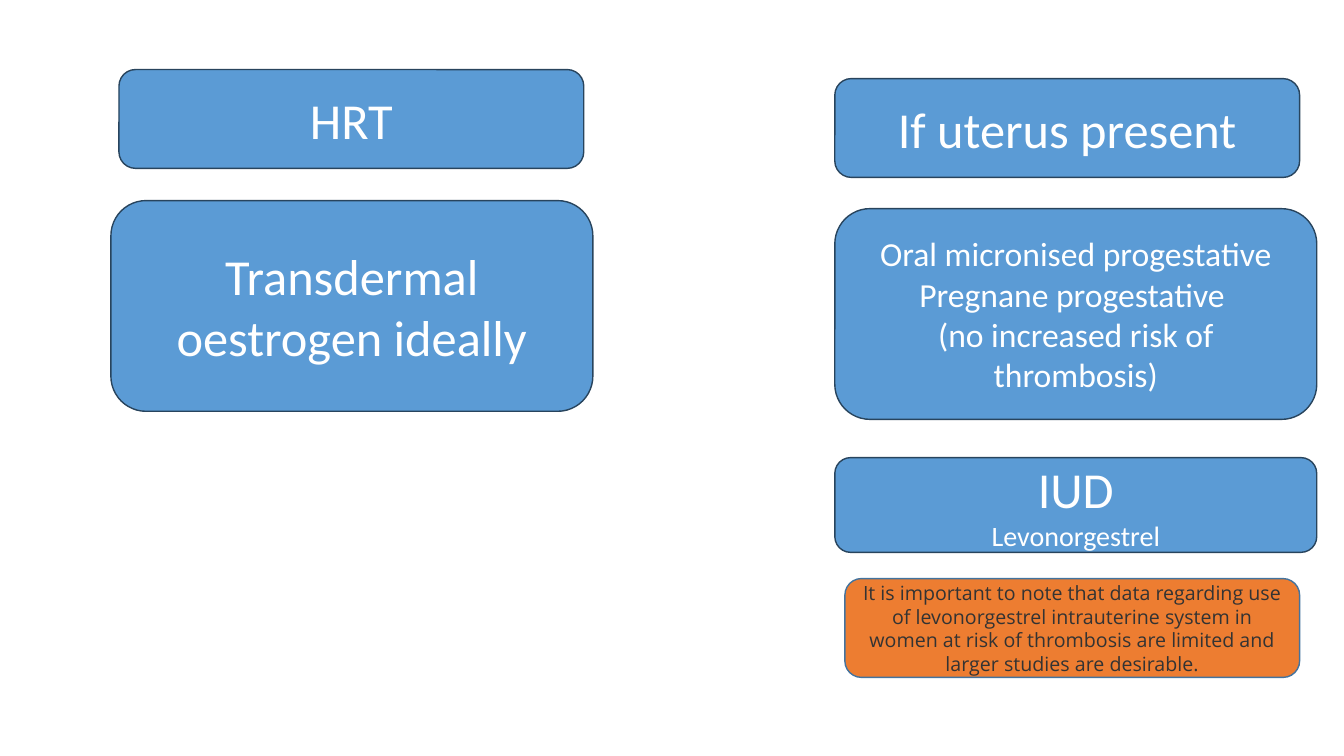
import pptx
import pptx.dml.color
import pptx.enum.shapes
import pptx.enum.text
import pptx.util
from pptx.util import Inches

BLUE, BLUE_EDGE = "5B9BD5", "28445D"
ORANGE, ORANGE_EDGE = "ED7D31", "43739E"
WHITE, DARK = "FFFFFF", "333333"


def rgb(hex_colour):
    return pptx.dml.color.RGBColor.from_string(hex_colour)


def add_card(s, left, top, width, height, lines, fill=BLUE, edge=BLUE_EDGE,
             colour=WHITE, font="Calibri"):
    """Add a rounded box; lines holds (text, size) for each paragraph."""
    sp = s.shapes.add_shape(
        pptx.enum.shapes.MSO_SHAPE.ROUNDED_RECTANGLE,
        Inches(left), Inches(top), Inches(width), Inches(height))
    sp.shadow.inherit = False
    sp.fill.solid()
    sp.fill.fore_color.rgb = rgb(fill)
    sp.line.color.rgb = rgb(edge)
    sp.line.width = pptx.util.Pt(1)

    tf = sp.text_frame
    tf.word_wrap = True
    tf.vertical_anchor = pptx.enum.text.MSO_ANCHOR.MIDDLE
    tf.text = "\n".join(text for text, size in lines)
    for p, (text, size) in zip(tf.paragraphs, lines):
        p.alignment = pptx.enum.text.PP_ALIGN.CENTER
        for r in p.runs:
            r.font.name = font
            r.font.size = pptx.util.Pt(size)
            r.font.color.rgb = rgb(colour)


def main():
    prs = pptx.Presentation()
    prs.slide_width, prs.slide_height = Inches(13.33), Inches(7.5)
    s = prs.slides.add_slide(prs.slide_layouts[6])

    # Left column: hormone therapy
    add_card(s, 1.18, 0.69, 4.61, 0.98, [("HRT", 36)])
    add_card(s, 1.1, 1.99, 4.78, 2.09, [("Transdermal oestrogen ideally", 36)])

    # Right column: options with a uterus
    add_card(s, 8.28, 0.78, 4.61, 0.98, [("If uterus present", 36)])
    add_card(s, 8.28, 2.07, 4.78, 2.09, [
        ("Oral micronised progestative", 24),
        ("Pregnane progestative ", 24),
        ("(no increased risk of thrombosis)", 24)])
    add_card(s, 8.28, 4.54, 4.78, 0.94, [("IUD", 36), ("Levonorgestrel", 20)])

    # Caution on the evidence
    add_card(s, 8.38, 5.74, 4.51, 0.98, [(
        "It is important to note that data regarding use of levonorgestrel "
        "intrauterine system in women at risk of thrombosis are limited and "
        "larger studies are desirable.", 14)],
        fill=ORANGE, edge=ORANGE_EDGE, colour=DARK, font="Open Sans")

    prs.save("out.pptx")


if __name__ == "__main__":
    main()
